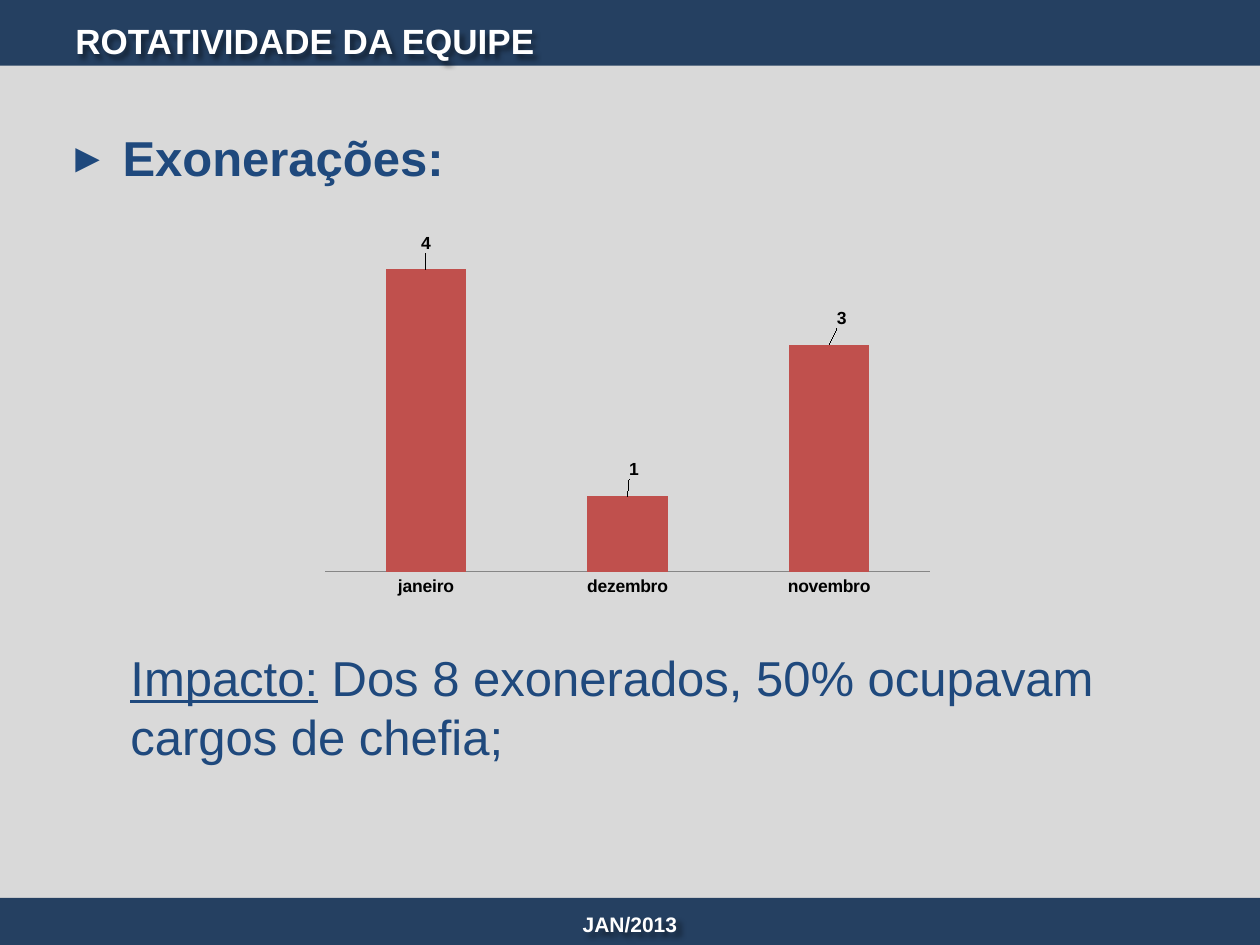
"""Build the staff turnover slide with its dismissals chart."""
from lxml import etree
from pptx import Presentation
from pptx import util as u
from pptx.chart.data import CategoryChartData
from pptx.dml.color import RGBColor
from pptx.enum import chart as charts, shapes, text
from pptx.oxml import parse_xml
from pptx.oxml.ns import nsdecls, qn

Pt = u.Pt
COLORS = {"panel": "D9D9D9", "band": "254061", "white": "FFFFFF", "body": "1F497D",
          "bar": "C0504D", "axis": "868686", "black": "000000"}
FONT = "Arial"


def color(name):
    return RGBColor.from_string(COLORS[name])


def add_text(runs, box, size, fill, bold=False, align=text.PP_ALIGN.LEFT,
             anchor=text.MSO_ANCHOR.TOP, bullet=None, shadow=False):
    shape = slide.shapes.add_textbox(*map(Pt, box))
    frame = shape.text_frame
    frame.word_wrap = True
    frame.vertical_anchor = anchor
    paragraph = frame.paragraphs[0]
    paragraph.alignment = align
    if bullet:
        properties = paragraph._p.get_or_add_pPr()
        properties.set("marL", str(Pt(27)))
        properties.set("indent", str(Pt(-27)))
        etree.SubElement(properties, qn("a:buFont"), typeface=FONT)
        etree.SubElement(properties, qn("a:buChar"), char=bullet)
    for words, underline in runs:
        run = paragraph.add_run()
        run.text = words
        run.font.name = FONT
        run.font.size = Pt(size)
        run.font.bold = bold
        run.font.underline = underline
        run.font.color.rgb = color(fill)
    if shadow:
        shape._element.spPr.append(parse_xml(
            f'<a:effectLst {nsdecls("a")}><a:outerShdw blurRad="38100" dist="38100" '
            'dir="2700000" algn="tl"><a:srgbClr val="000000"><a:alpha val="43000"/>'
            '</a:srgbClr></a:outerShdw></a:effectLst>'))


presentation = Presentation()
presentation.slide_width, presentation.slide_height = Pt(720), Pt(540)
slide = presentation.slides.add_slide(presentation.slide_layouts[6])

for top, height, fill in [(26, 493, "panel"), (513, 27, "band"), (-0.7, 38.2, "band")]:
    shape = slide.shapes.add_shape(
        shapes.MSO_SHAPE.RECTANGLE, Pt(0), Pt(top), Pt(720), Pt(height))
    shape.shadow.inherit = False
    shape.fill.solid()
    shape.fill.fore_color.rgb = color(fill)
    shape.line.fill.background()

add_text([("JAN/2013", False)], (0, 514, 720, 28), 12, "white", bold=True,
         align=text.PP_ALIGN.CENTER, anchor=text.MSO_ANCHOR.MIDDLE, shadow=True)
add_text([("ROTATIVIDADE DA EQUIPE", False)], (36, 3.6, 545, 39.6), 20, "white",
         bold=True, anchor=text.MSO_ANCHOR.MIDDLE, shadow=True)
add_text([("Exonerações:", False)], (36, 69.4, 657, 42), 28, "body", bold=True, bullet="▸")
add_text([("Impacto:", True), (" Dos 8 exonerados, 50% ocupavam cargos de chefia;", False)],
         (67.5, 366.5, 625.5, 75), 28, "body")

data = CategoryChartData()
data.categories = ["janeiro", "dezembro", "novembro"]
data.add_series("Series 1", [4, 1, 3])
chart = slide.shapes.add_chart(charts.XL_CHART_TYPE.COLUMN_CLUSTERED,
                               Pt(178.6), Pt(128), Pt(360), Pt(216), data).chart
chart.has_legend = False
chart.has_title = False
chart.font.name = FONT
chart.font.size = Pt(10)
chart.font.bold = True
chart.font.color.rgb = color("black")

chart.value_axis.visible = False
chart.value_axis.has_major_gridlines = False
chart.value_axis.minimum_scale = 0
chart.value_axis.maximum_scale = 4.5
chart.category_axis.major_tick_mark = charts.XL_TICK_MARK.NONE
chart.category_axis.format.line.color.rgb = color("axis")
chart.category_axis.format.line.width = Pt(0.75)

plot = chart.plots[0]
plot.gap_width = 150
plot.vary_by_categories = False
series = plot.series[0]
series.format.fill.solid()
series.format.fill.fore_color.rgb = color("bar")
labels = series.data_labels
labels.show_value = True
labels.position = charts.XL_LABEL_POSITION.OUTSIDE_END

for index, shift in enumerate([0, 0.01, 0.02]):
    label = series.points[index].data_label
    label.position = charts.XL_LABEL_POSITION.OUTSIDE_END
    label._dLbl.find(qn("c:idx")).addnext(parse_xml(
        f'<c:layout {nsdecls("c")}><c:manualLayout><c:x val="{shift}"/>'
        '<c:y val="-0.03"/></c:manualLayout></c:layout>'))

plot_area = chart._chartSpace.chart.plotArea
for layout in plot_area.findall(qn("c:layout")):
    plot_area.remove(layout)
plot_area.insert(0, parse_xml(
    f'<c:layout {nsdecls("c")}><c:manualLayout><c:layoutTarget val="inner"/>'
    '<c:xMode val="edge"/><c:yMode val="edge"/><c:x val="0.02"/><c:y val="0.02"/>'
    '<c:w val="0.96"/><c:h val="0.9"/></c:manualLayout></c:layout>'))

presentation.save("out.pptx")
